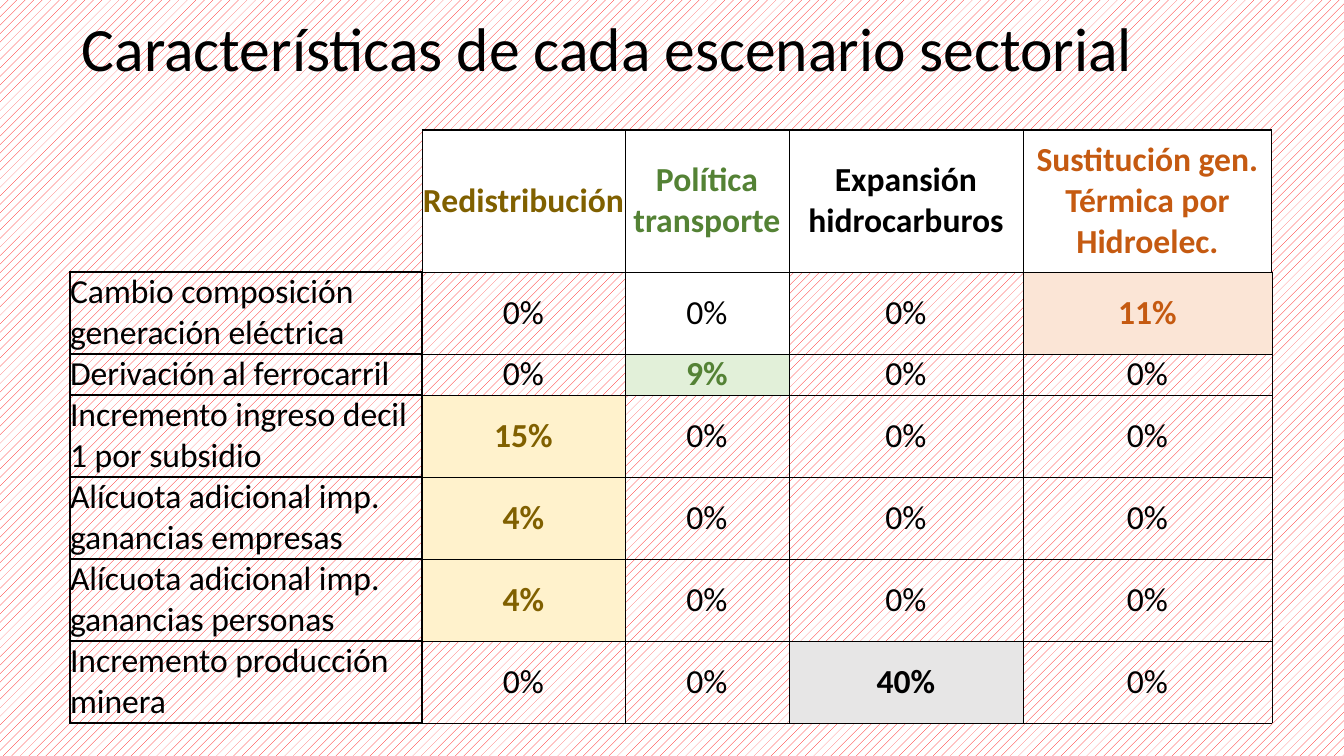
from pptx import Presentation
from pptx.dml.color import RGBColor
from pptx.enum.dml import MSO_PATTERN
from pptx.enum.text import MSO_ANCHOR, PP_ALIGN
from pptx.util import Emu, Pt
from lxml.etree import SubElement
from pptx.oxml.ns import qn

BLACK = RGBColor(0x00, 0x00, 0x00)
WHITE = RGBColor(0xFF, 0xFF, 0xFF)
RED = RGBColor(0xFF, 0x00, 0x00)
GOLD = RGBColor(0x80, 0x60, 0x00)
CREAM = RGBColor(0xFF, 0xF2, 0xCC)
GREEN = RGBColor(0x54, 0x82, 0x35)
MINT = RGBColor(0xE2, 0xF0, 0xD9)
GREY = RGBColor(0xE7, 0xE6, 0xE6)
RUST = RGBColor(0xC5, 0x5A, 0x11)
PEACH = RGBColor(0xFB, 0xE5, 0xD6)

FONT = "Calibri"
THIN, THICK = 0.5, 1

# Scenario, its text colour and the tint of its active cells
HEADS = [
    ("Redistribución", GOLD, CREAM),
    ("Política transporte", GREEN, MINT),
    ("Expansión hidrocarburos", BLACK, GREY),
    ("Sustitución gen. Térmica por Hidroelec.", RUST, PEACH),
]
# Measure, followed by its value in each scenario
ROWS = [
    ("Cambio composición generación eléctrica", 0, 0, 0, 11),
    ("Derivación al ferrocarril", 0, 9, 0, 0),
    ("Incremento ingreso decil 1 por subsidio", 15, 0, 0, 0),
    ("Alícuota adicional imp. ganancias empresas", 4, 0, 0, 0),
    ("Alícuota adicional imp. ganancias personas", 4, 0, 0, 0),
    ("Incremento producción minera", 0, 0, 40, 0),
]
WIDTHS = [352, 203, 164, 234, 249]
HEIGHTS = [142, 82, 41, 82, 82, 82, 82]


def px(n):
    return Emu(round(n * 12192000 / 1344))


def add_run(para, text, size, color, bold=False):
    run = para.add_run()
    run.text = text
    font = run.font
    font.name, font.size, font.bold = FONT, Pt(size), bold
    font.color.rgb = color


def set_edges(cell, left, right, top, bottom):
    """Draw the four cell borders; a width of 0 hides one."""
    props = cell._tc.get_or_add_tcPr()
    for side, width in zip("LRTB", (left, right, top, bottom)):
        line = SubElement(props, qn("a:ln" + side), w=str(Pt(width)))
        if width:
            fill = SubElement(line, qn("a:solidFill"))
            SubElement(fill, qn("a:srgbClr"), val=str(BLACK))
        else:
            SubElement(line, qn("a:noFill"))


def set_cell(cell, text, color, bold, tint, edges, label=False):
    set_edges(cell, *edges)
    if tint is None:
        cell.fill.background()
    else:
        cell.fill.solid()
        cell.fill.fore_color.rgb = tint
    cell.margin_left = cell.margin_right = 0
    cell.margin_top = cell.margin_bottom = 0
    cell.vertical_anchor = MSO_ANCHOR.BOTTOM if label else MSO_ANCHOR.MIDDLE
    para = cell.text_frame.paragraphs[0]
    para.alignment = PP_ALIGN.LEFT if label else PP_ALIGN.CENTER
    if text:
        add_run(para, text, 24, color, bold)


def add_title(slide, x, y, w, h):
    box = slide.shapes.add_textbox(px(x), px(y), px(w), px(h))
    frame = box.text_frame
    frame.word_wrap = True
    frame.vertical_anchor = MSO_ANCHOR.MIDDLE
    para = frame.paragraphs[0]
    para.line_spacing = 0.9
    add_run(para, "Características de cada escenario sectorial", 44, BLACK)


def add_grid(slide, x, y):
    shape = slide.shapes.add_table(len(HEIGHTS), len(WIDTHS), px(x), px(y),
                                   px(sum(WIDTHS)), px(sum(HEIGHTS)))
    table = shape.table
    table.first_row = table.horz_banding = False
    for col, width in zip(table.columns, WIDTHS):
        col.width = px(width)
    for row, height in zip(table.rows, HEIGHTS):
        row.height = px(height)

    # Header row, with an open corner
    set_cell(table.cell(0, 0), "", BLACK, False, None, (0, THIN, 0, THICK))
    for c, (name, color, _) in enumerate(HEADS, 1):
        right = THICK if c == len(HEADS) else THIN
        set_cell(table.cell(0, c), name, color, True, WHITE,
                 (THIN, right, THICK, THIN))

    # Measures and their values
    for r, (name, *values) in enumerate(ROWS, 1):
        set_cell(table.cell(r, 0), name, BLACK, False, None, [THICK] * 4, True)
        for c, value in enumerate(values, 1):
            _, color, tint = HEADS[c - 1]
            if not value:
                color = BLACK
                tint = WHITE if (r, c) == (1, 2) else None
            left = THICK if c == 1 else THIN
            set_cell(table.cell(r, c), f"{value}%", color, value > 0, tint,
                     (left, THIN, THIN, THIN))


def add_back(slide):
    fill = slide.background.fill
    fill.patterned()
    fill.pattern = MSO_PATTERN.PERCENT_20
    fill.fore_color.rgb = RED
    fill.back_color.rgb = WHITE


def main():
    deck = Presentation()
    deck.slide_width, deck.slide_height = px(1344), px(756)
    slide = deck.slides.add_slide(deck.slide_layouts[6])
    add_back(slide)
    add_title(slide, 72, 11, 1210, 81)
    add_grid(slide, 70, 130)
    deck.save("out.pptx")


if __name__ == "__main__":
    main()
